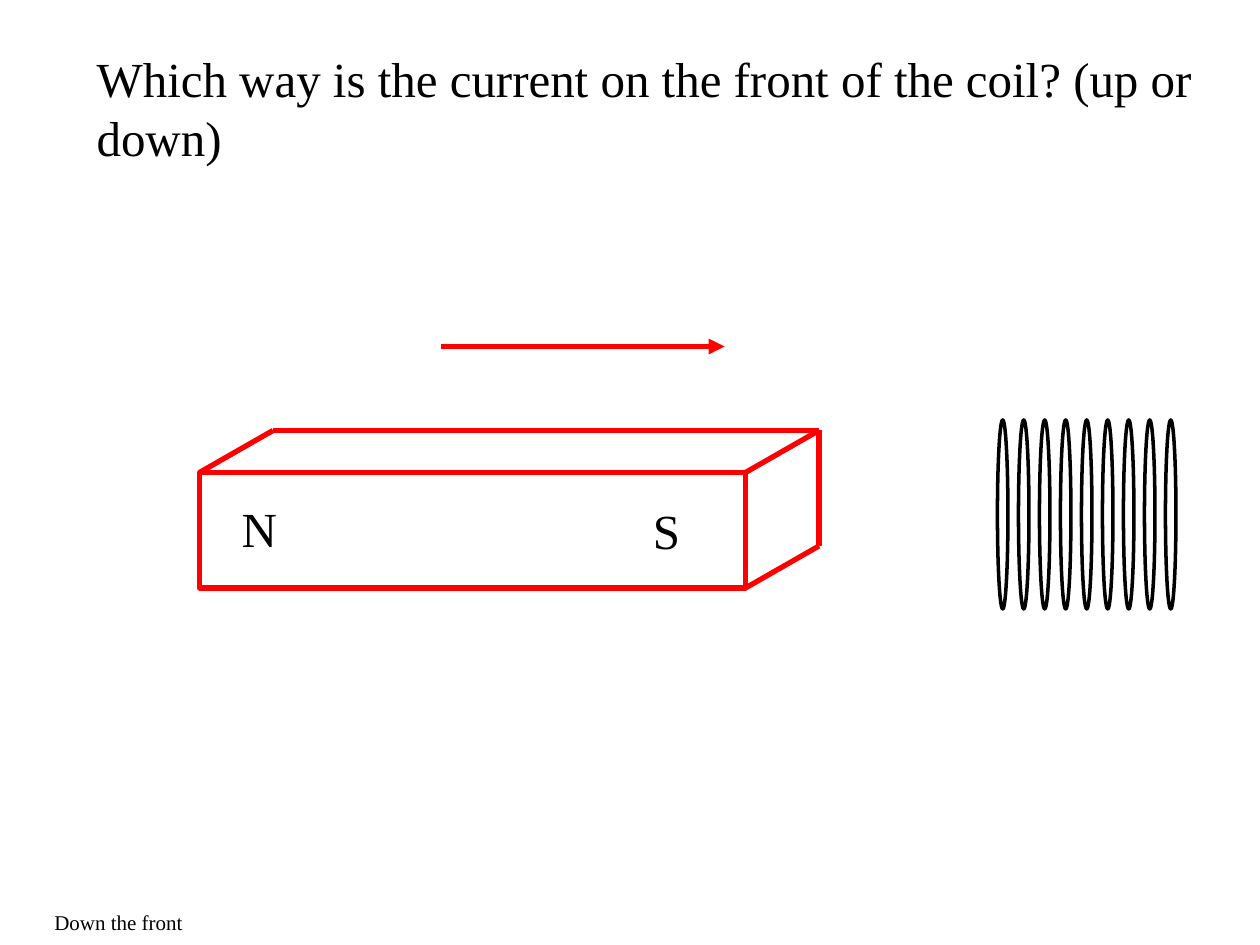
from dataclasses import dataclass

from lxml import etree
from pptx import Presentation
from pptx.dml.color import RGBColor
from pptx.enum.shapes import MSO_CONNECTOR, MSO_SHAPE
from pptx.enum.text import MSO_ANCHOR, MSO_AUTO_SIZE, PP_ALIGN
from pptx.oxml.ns import qn
from pptx.util import Pt

STRAIGHT = MSO_CONNECTOR.STRAIGHT
RECTANGLE, OVAL = MSO_SHAPE.RECTANGLE, MSO_SHAPE.OVAL
TOP, LEFT = MSO_ANCHOR.TOP, PP_ALIGN.LEFT
FIT_SHAPE, NO_FIT = MSO_AUTO_SIZE.SHAPE_TO_FIT_TEXT, MSO_AUTO_SIZE.NONE
TITLE_ONLY = 5


@dataclass(frozen=True)
class Theme:
    font: str = "Times New Roman"
    ink: RGBColor = RGBColor(0x00, 0x00, 0x00)
    magnet: RGBColor = RGBColor(0xFF, 0x00, 0x00)
    paper: RGBColor = RGBColor(0xFF, 0xFF, 0xFF)
    large: int = 28
    small: int = 12
    magnet_line: int = 3
    coil_line: int = 2


class SlideBuilder:
    """Draws styled elements on one slide; all lengths are in points."""

    def __init__(self, slide, theme):
        self.slide = slide
        self.theme = theme
        slide.background.fill.solid()
        slide.background.fill.fore_color.rgb = theme.paper

    def set_text(self, shape, text, size, wrap, fit):
        frame = shape.text_frame
        frame.text = text
        frame.word_wrap = wrap
        frame.auto_size = fit
        frame.vertical_anchor = TOP
        paragraph = frame.paragraphs[0]
        paragraph.alignment = LEFT
        paragraph.font.name = self.theme.font
        paragraph.font.size = Pt(size)
        paragraph.font.color.rgb = self.theme.ink

    def title(self, text, left, top, width, height):
        shape = self.slide.shapes.title
        shape.left, shape.top = Pt(left), Pt(top)
        shape.width, shape.height = Pt(width), Pt(height)
        self.set_text(shape, text, self.theme.large, True, NO_FIT)

    def label(self, shapes, text, left, top, width, height, size):
        box = shapes.add_textbox(Pt(left), Pt(top), Pt(width), Pt(height))
        self.set_text(box, text, size, False, FIT_SHAPE)

    def outline(self, shapes, kind, left, top, width, height, color, weight):
        shape = shapes.add_shape(kind, Pt(left), Pt(top), Pt(width), Pt(height))
        shape.shadow.inherit = False
        shape.fill.background()
        shape.line.color.rgb = color
        shape.line.width = Pt(weight)

    def line(self, shapes, start, end, arrow=False):
        connector = shapes.add_connector(
            STRAIGHT, *(Pt(value) for value in (*start, *end)))
        connector.line.color.rgb = self.theme.magnet
        connector.line.width = Pt(self.theme.magnet_line)
        properties = connector._element.spPr
        if arrow:
            line_xml = properties.find(qn("a:ln"))
            etree.SubElement(line_xml, qn("a:tailEnd"), type="triangle")
        etree.SubElement(properties, qn("a:effectLst"))

    def bar_magnet(self, left, top, width, height, depth_x, depth_y):
        theme = self.theme
        group = self.slide.shapes.add_group_shape().shapes
        right, bottom = left + width, top + height
        back_left = (left + depth_x, top - depth_y)
        back_right = (right + depth_x, top - depth_y)
        back_bottom = (right + depth_x, bottom - depth_y)

        # Front face, then the visible edges behind it
        self.outline(group, RECTANGLE, left, top, width, height,
                     theme.magnet, theme.magnet_line)
        for start, end in (
            ((left, top), back_left),
            (back_left, back_right),
            ((right, top), back_right),
            (back_right, back_bottom),
            ((right, bottom), back_bottom),
        ):
            self.line(group, start, end)

        # Poles
        self.label(group, "N", left + 17, top + 11.5, 34.5, 41, theme.large)
        self.label(group, "S", right - 60, top + 12.5, 30, 41, theme.large)

    def coil(self, left, top, turns, pitch, width, height):
        for turn in range(turns):
            self.outline(self.slide.shapes, OVAL, left + turn * pitch, top,
                         width, height, self.theme.ink, self.theme.coil_line)


def main():
    presentation = Presentation()
    presentation.slide_width, presentation.slide_height = Pt(720), Pt(540)
    slide = presentation.slides.add_slide(
        presentation.slide_layouts[TITLE_ONLY])
    theme = Theme()
    builder = SlideBuilder(slide, theme)

    # Question and answer
    builder.title(
        "Which way is the current on the front of the coil? (up or down)",
        48, 24, 654, 74)
    builder.label(slide.shapes, "Down the front", 24, 516, 88, 21.6,
                  theme.small)

    # Magnet moving towards the coil
    builder.bar_magnet(114, 270, 312, 66, 42, 24)
    builder.line(slide.shapes, (252, 198), (414, 198), arrow=True)
    builder.coil(570, 240, turns=9, pitch=12, width=6, height=108)

    presentation.save("out.pptx")


if __name__ == "__main__":
    main()
